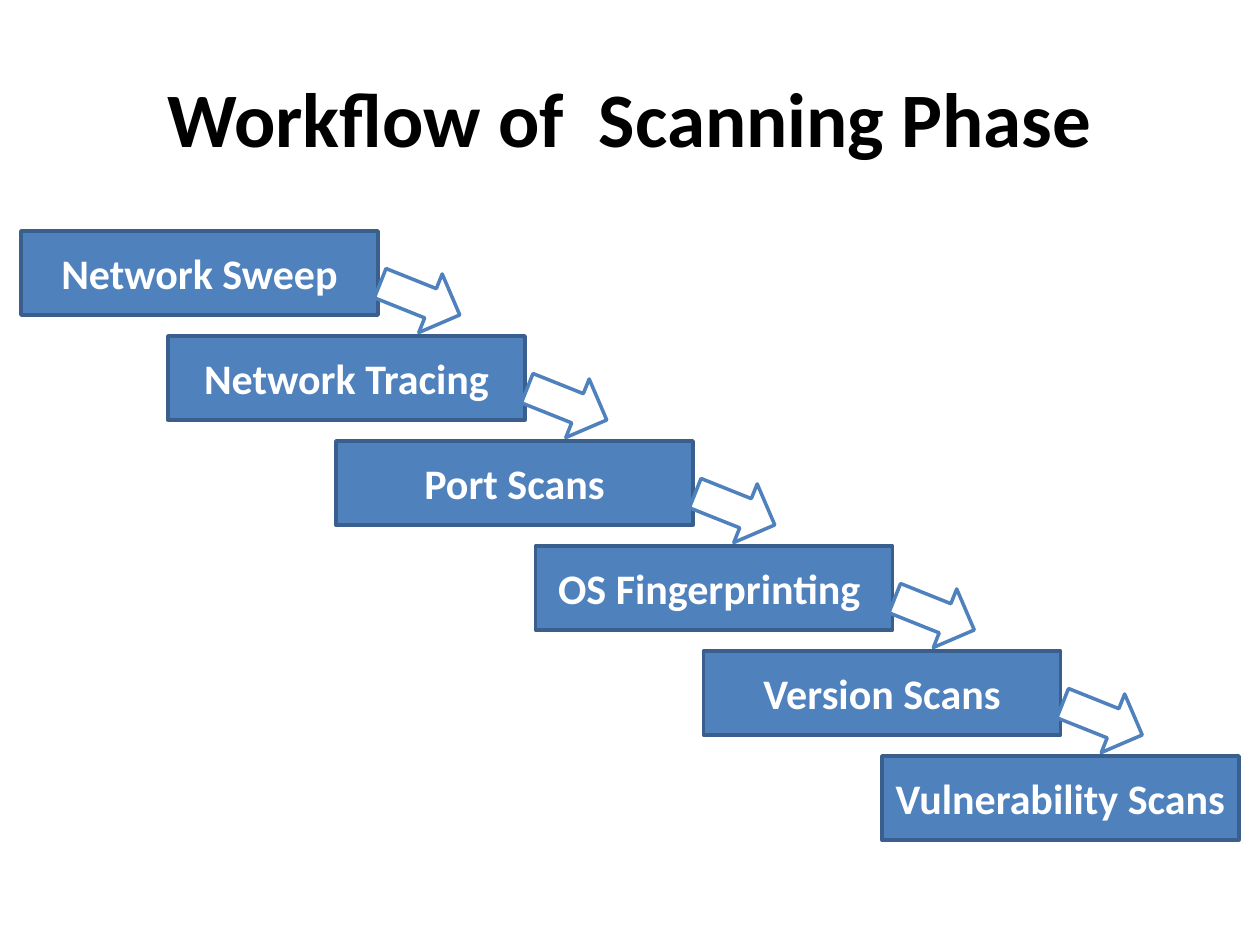
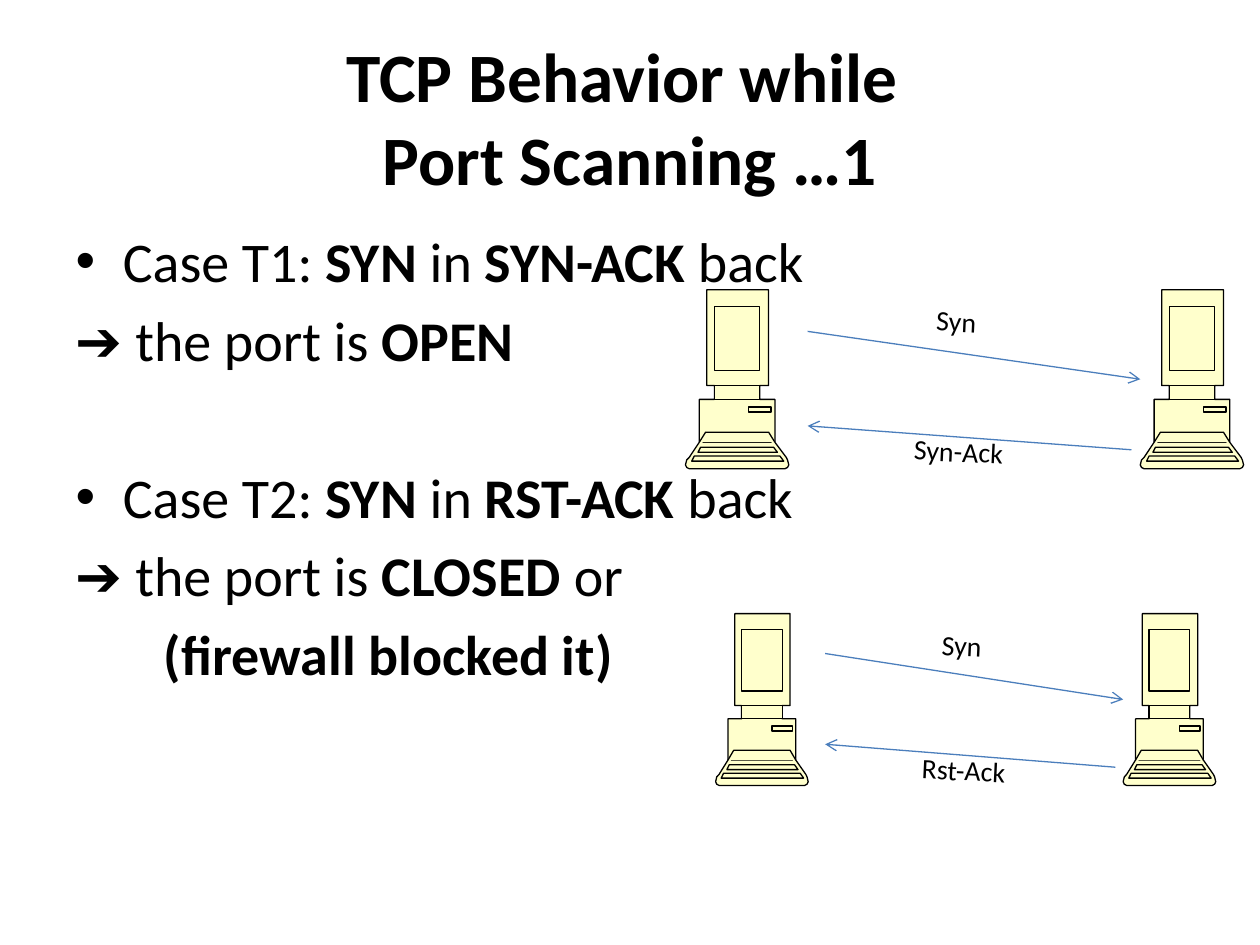
from lxml import etree
from pptx import Presentation
from pptx.dml.color import RGBColor
from pptx.enum.shapes import MSO_CONNECTOR, MSO_SHAPE
from pptx.enum.text import MSO_ANCHOR, PP_ALIGN
from pptx.oxml.ns import qn
from pptx.util import Inches, Pt

RECT, DOWN_ARROW = MSO_SHAPE.RECTANGLE, MSO_SHAPE.DOWN_ARROW
STRAIGHT = MSO_CONNECTOR.STRAIGHT
CENTER, LEFT = PP_ALIGN.CENTER, PP_ALIGN.LEFT
TOP = MSO_ANCHOR.TOP

FONT = "Calibri"
BLACK, WHITE = "000000", "FFFFFF"
BLUE, DARK_BLUE, LINE_BLUE = "4F81BD", "3A5F8C", "4B7EBC"
CREAM = "FFFFCC"
TITLE_ONLY, TITLE_AND_BODY = 5, 1


def paint(shape, fill, line, width):
    shape.shadow.inherit = False
    shape.fill.solid()
    shape.fill.fore_color.rgb = RGBColor.from_string(fill)
    shape.line.color.rgb = RGBColor.from_string(line)
    shape.line.width = Pt(width)


def style(p, size, color, bold=None, align=None):
    p.font.name, p.font.size, p.font.bold = FONT, Pt(size), bold
    p.font.color.rgb = RGBColor.from_string(color)
    p.alignment = align


prs = Presentation()
prs.slide_width, prs.slide_height = Inches(10), Inches(7.5)

# Titles; a vertical tab is a line break
slides = []
for layout, title, size in [
    (TITLE_ONLY, "Workflow of  Scanning Phase", 44),
    (TITLE_AND_BODY, "TCP Behavior while \vPort Scanning …1", 39.6),
]:
    s = prs.slides.add_slide(prs.slide_layouts[layout])
    s.shapes.title.text = title
    style(s.shapes.title.text_frame.paragraphs[0], size, BLACK, True, CENTER)
    slides.append(s)
workflow, behavior = slides

# Workflow staircase on a grid of 120 columns by 90 rows
cell = prs.slide_width / 120
STEP_W, STEP_H, FIRST_ROW, ROW_STEP = 34, 8, 22, 10
steps = [
    ("Network Sweep", 2),
    ("Network Tracing", 16),
    ("Port Scans", 32),
    ("OS Fingerprinting ", 51),
    ("Version Scans", 67),
    ("Vulnerability Scans", 84),
]
for i, (name, col) in enumerate(steps):
    row = FIRST_ROW + i * ROW_STEP
    box = workflow.shapes.add_shape(RECT, int(col * cell), int(row * cell),
                                    int(STEP_W * cell), int(STEP_H * cell))
    paint(box, BLUE, DARK_BLUE, 2)
    box.text_frame.text = name
    style(box.text_frame.paragraphs[0], 24, WHITE, True, CENTER)

for i, (name, col) in enumerate(steps[:-1]):
    row = FIRST_ROW + i * ROW_STEP + 2.4
    arrow = workflow.shapes.add_shape(
        DOWN_ARROW, int((col + STEP_W + 1) * cell), int(row * cell),
        int(6 * cell), int(8.16 * cell))
    arrow.rotation = 291.8
    paint(arrow, WHITE, BLUE, 2)

# Cases: bulleted?, left indent in inches, space before, (text, bold) runs
cases = [
    (True, 0, None, [("Case T1: ", False), ("SYN", True), (" in ", False),
                     ("SYN-ACK", True), (" back", False)]),
    (False, 0, None, [("➔ the port is ", False), ("OPEN", True)]),
    (True, 0, 51.4, [("Case T2: ", False), ("SYN ", True), ("in ", False),
                     ("RST-ACK", True), (" back", False)]),
    (False, 0, None, [("➔ the port is ", False), ("CLOSED ", True), ("or", False)]),
    (False, 0.7, None, [("(firewall blocked it)", True)]),
]
tf = behavior.placeholders[1].text_frame
for i, (bulleted, indent, gap, runs) in enumerate(cases):
    p = tf.add_paragraph() if i else tf.paragraphs[0]
    style(p, 32, BLACK)
    if gap:
        p.space_before = Pt(gap)
    if not bulleted:
        pPr = p._p.get_or_add_pPr()
        pPr.set("marL", str(Inches(indent)))
        pPr.set("indent", "0")
        pPr.insert_element_before(etree.Element(qn("a:buNone")),
                                  "a:tabLst", "a:defRPr", "a:extLst")
    for text, bold in runs:
        r = p.add_run()
        r.text, r.font.bold = text, bold

# Computer contours in hundredths of an inch: case, key rows, keyboard, details
case = [(80, 133), (71, 121), (71, 87), (59, 87), (59, 76), (66, 76),
        (66, 0), (17, 0), (17, 76), (23, 76), (23, 87), (11, 87),
        (11, 121), (3, 133), (1, 135), (0, 139), (1, 141), (3, 142),
        (79, 142), (81, 141), (82, 139), (81, 135)]
key_rows = [
    [(68, 121), (66, 118), (17, 118), (14, 121)],
    [(73, 129), (70, 125), (12, 125), (10, 129)],
    [(78, 136), (75, 132), (7, 132), (5, 136)],
]
keyboard = [(71, 121), (66, 113), (16, 113), (11, 121)]
drive, screen, neck = [
    [(left, top), (left, bottom), (right, bottom), (right, top)]
    for left, top, right, bottom in
    [(50, 93, 68, 97), (23, 13, 59, 64), (23, 76, 59, 87)]
]
details = [keyboard, drive, screen, neck]

# Each exchange is one layout, placed at x, y and scaled
for x, y, scale_x, scale_y, reply in [
    (5.44, 2.3, 1, 1, "Syn-Ack"),
    (5.68, 4.87, 0.896, 0.96, "Rst-Ack"),
]:
    exchange = behavior.shapes.add_group_shape().shapes
    for offset in (0, 3.61):
        builder = exchange.build_freeform(
            *case[0], scale=(Inches(scale_x) / 100, Inches(scale_y) / 100))
        builder.add_line_segments(case[1:])
        for contour in key_rows + details:
            builder.move_to(*contour[0])
            builder.add_line_segments(contour[1:], close=contour is not keyboard)
        computer = builder.convert_to_shape(Inches(x + offset * scale_x), Inches(y))
        paint(computer, CREAM, BLACK, 0.75)

        # A contour of its own path is filled over the ones below, not cut out
        outline = next(computer._element.iter(qn("a:path")))
        contour_list, size = outline.getparent(), dict(outline.attrib)
        for step in list(outline):
            if step.tag == qn("a:moveTo"):
                contour_path = etree.SubElement(contour_list, qn("a:path"), size)
            contour_path.append(step)
        contour_list.remove(outline)

    for text, left, top, width, height in [
        ("Syn", 1.89, 0.04, 1.18, 0.59),
        (reply, 1.71, 1.07, 1.45, 0.72),
    ]:
        label = exchange.add_shape(
            RECT, Inches(x + left * scale_x), Inches(y + top * scale_y),
            Inches(width * scale_x), Inches(height * scale_y))
        label.rotation = 2.8
        paint(label, WHITE, WHITE, 0.5)
        tf = label.text_frame
        tf.text, tf.vertical_anchor = text, TOP
        p = tf.paragraphs[0]
        style(p, 16, BLACK, align=LEFT)
        p.line_spacing, p.space_after = 1.15, Pt(10)

    for x1, y1, x2, y2 in [(3.54, 1.27, 0.97, 1.08), (0.97, 0.33, 3.61, 0.71)]:
        message = exchange.add_connector(
            STRAIGHT, Inches(x + x1 * scale_x), Inches(y + y1 * scale_y),
            Inches(x + x2 * scale_x), Inches(y + y2 * scale_y))
        message.line.color.rgb = RGBColor.from_string(LINE_BLUE)
        message.line.width = Pt(0.75)
        etree.SubElement(message.line._get_or_add_ln(), qn("a:tailEnd"), type="arrow")
        etree.SubElement(message._element.spPr, qn("a:effectLst"))

prs.save("out.pptx")
